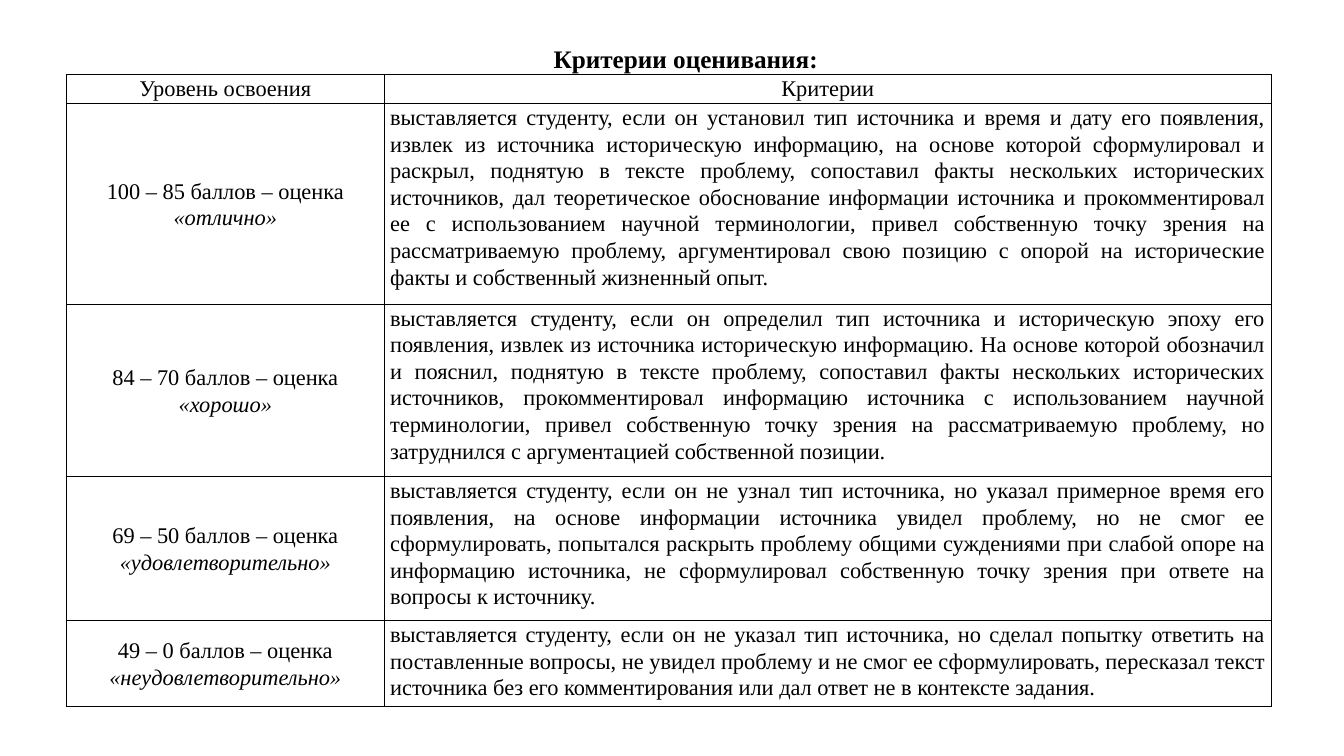
import pptx
import pptx.util
import pptx.dml.color
import pptx.enum.text
import pptx.oxml
import pptx.oxml.ns
from pptx.util import Inches, Pt
from pptx.enum.text import PP_ALIGN, MSO_ANCHOR, MSO_AUTO_SIZE

BLACK = pptx.dml.color.RGBColor(0, 0, 0)
WHITE = pptx.dml.color.RGBColor(255, 255, 255)
FONT = "Times New Roman"

TITLE = "Критерии оценивания:"
HEADERS = ("Уровень освоения", "Критерии")
CRITERIA = [
    ("100 – 85 баллов – оценка ", "«отлично»",
     "выставляется студенту, если он установил тип источника и время и дату его появления, "
     "извлек из источника историческую информацию, на основе которой сформулировал и "
     "раскрыл, поднятую в тексте проблему, сопоставил факты нескольких исторических "
     "источников, дал теоретическое обоснование информации источника и прокомментировал "
     "ее с использованием научной терминологии, привел собственную точку зрения на "
     "рассматриваемую проблему, аргументировал свою позицию с опорой на исторические "
     "факты и собственный жизненный опыт."),
    ("84 – 70 баллов – оценка ", "«хорошо»",
     "выставляется студенту, если он определил тип источника и историческую эпоху его "
     "появления, извлек из источника историческую информацию. На основе которой обозначил "
     "и пояснил, поднятую в тексте проблему, сопоставил факты нескольких исторических "
     "источников, прокомментировал информацию источника с использованием научной "
     "терминологии, привел собственную точку зрения на рассматриваемую проблему, но "
     "затруднился с аргументацией собственной позиции."),
    ("69 – 50 баллов – оценка ", "«удовлетворительно»",
     "выставляется студенту, если он не узнал тип источника, но указал примерное время его "
     "появления, на основе информации источника увидел проблему, но не смог ее "
     "сформулировать, попытался раскрыть проблему общими суждениями при слабой опоре на "
     "информацию источника, не сформулировал собственную точку зрения при ответе на "
     "вопросы к источнику."),
    ("49 – 0 баллов – оценка ", "«неудовлетворительно»",
     "выставляется студенту, если он не указал тип источника, но сделал попытку ответить на "
     "поставленные вопросы, не увидел проблему и не смог ее сформулировать, пересказал текст "
     "источника без его комментирования или дал ответ не в контексте задания."),
]
COL_WIDTHS = (3.15, 8.8)
ROW_HEIGHTS = (0.29, 1.99, 1.71, 1.43, 0.85)


def style_font(p, size):
    p.font.name = FONT
    p.font.size = Pt(size)
    p.font.color.rgb = BLACK


def add_borders(cell):
    tcPr = cell._tc.get_or_add_tcPr()
    for i, side in enumerate(("lnL", "lnR", "lnT", "lnB")):
        tcPr.insert(i, pptx.oxml.parse_xml(
            f'<a:{side} {pptx.oxml.ns.nsdecls("a")} w="12700"><a:solidFill>'
            f'<a:srgbClr val="{BLACK}"/></a:solidFill></a:{side}>'))


def fill_cell(cell, parts, align, anchor=MSO_ANCHOR.TOP):
    cell.margin_left = cell.margin_right = Inches(0.06)
    cell.margin_top = cell.margin_bottom = 0
    cell.vertical_anchor = anchor
    cell.fill.solid()
    cell.fill.fore_color.rgb = WHITE
    add_borders(cell)
    p = cell.text_frame.paragraphs[0]
    p.alignment = align
    p.line_spacing = 1.07
    style_font(p, 16)
    for text, italic in parts:
        r = p.add_run()
        r.text = text
        if italic:
            r.font.italic = True


def main():
    prs = pptx.Presentation()
    prs.slide_width, prs.slide_height = Inches(13.33), Inches(7.5)
    s = prs.slides.add_slide(prs.slide_layouts[5])

    title = s.shapes.title
    title.left, title.top = Inches(5.39), Inches(0.23)
    title.width, title.height = Inches(3.29), Inches(0.51)
    tf = title.text_frame
    tf.text = TITLE
    tf.auto_size = MSO_AUTO_SIZE.NONE
    tf.vertical_anchor = MSO_ANCHOR.TOP
    p = tf.paragraphs[0]
    p.alignment = PP_ALIGN.LEFT
    p.line_spacing = 1.5
    p.space_after = Pt(8)
    style_font(p, 18)
    p.font.bold = True

    table = s.shapes.add_table(
        len(ROW_HEIGHTS), len(COL_WIDTHS), Inches(0.66), Inches(0.74),
        Inches(sum(COL_WIDTHS)), Inches(sum(ROW_HEIGHTS))).table
    table.first_row = table.horz_banding = False
    for col, width in zip(table.columns, COL_WIDTHS):
        col.width = Inches(width)
    for row, height in zip(table.rows, ROW_HEIGHTS):
        row.height = Inches(height)

    for c, header in enumerate(HEADERS):
        fill_cell(table.cell(0, c), [(header, False)], PP_ALIGN.CENTER)
    for r, (score, grade, text) in enumerate(CRITERIA, start=1):
        fill_cell(table.cell(r, 0), [(score, False), (grade, True)],
                  PP_ALIGN.CENTER, MSO_ANCHOR.MIDDLE)
        fill_cell(table.cell(r, 1), [(text, False)], PP_ALIGN.JUSTIFY)

    prs.save("out.pptx")


if __name__ == "__main__":
    main()
